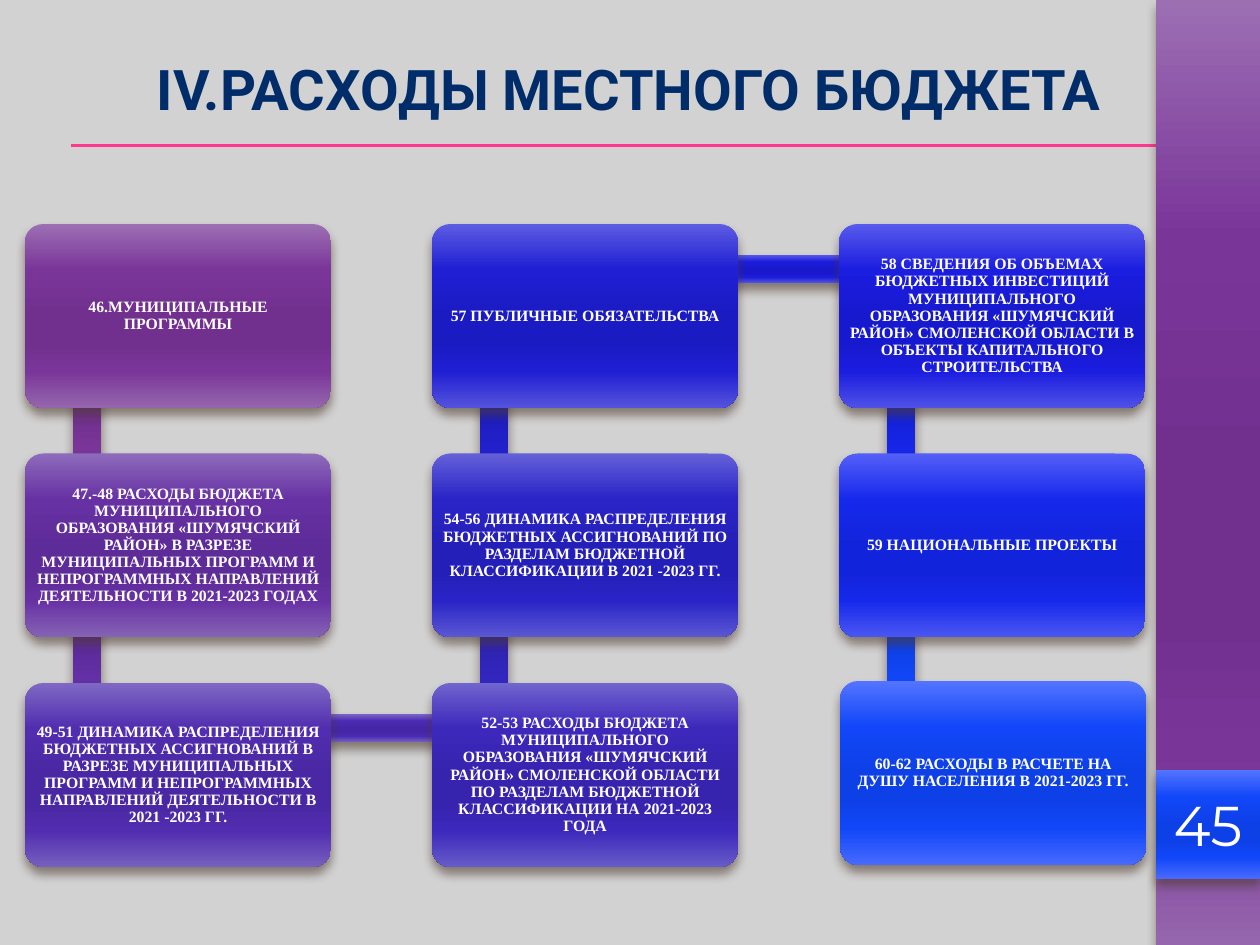
from dataclasses import dataclass

from lxml.etree import SubElement
from pptx import Presentation
from pptx.dml.color import RGBColor
from pptx.enum.shapes import MSO_CONNECTOR, MSO_SHAPE
from pptx.enum.text import MSO_ANCHOR, PP_ALIGN
from pptx.oxml.ns import qn
from pptx.util import Pt

EMU_PER_PX = 914400 / 126


@dataclass(frozen=True)
class Theme:
    background: str = "D2D2D2"
    title: str = "002D6A"
    rule: str = "FF388C"
    text: str = "FFFFFF"
    shadow: str = "4E3B30"
    # Gradients run from the top edge through light and dark to the bottom edge
    purple: tuple = ("9C6FB3", "7A3599", "71308E", "9566AD")
    blue: tuple = ("5374FF", "1147F8", "0E40E7", "476AFD")
    title_font: str = "Roboto"
    number_font: str = "Montserrat"
    card_font: str = "Times New Roman"
    title_size: int = 32
    number_size: int = 32
    card_size: int = 9


THEME = Theme()

# Each step: card text, card gradient, gradient of the bar to the next card
STEPS = [
    ("46.МУНИЦИПАЛЬНЫЕ ПРОГРАММЫ", THEME.purple, THEME.purple),
    ("47.-48 РАСХОДЫ БЮДЖЕТА МУНИЦИПАЛЬНОГО ОБРАЗОВАНИЯ «ШУМЯЧСКИЙ РАЙОН» В РАЗРЕЗЕ "
     "МУНИЦИПАЛЬНЫХ ПРОГРАММ И НЕПРОГРАММНЫХ НАПРАВЛЕНИЙ ДЕЯТЕЛЬНОСТИ В 2021-2023 ГОДАХ",
     ("8D6BBB", "6731A4", "5E2C98", "8663B5"), ("8B6BBD", "6430A6", "5C2B9A", "8462B7")),
    ("49-51 ДИНАМИКА РАСПРЕДЕЛЕНИЯ БЮДЖЕТНЫХ АССИГНОВАНИЙ В РАЗРЕЗЕ МУНИЦИПАЛЬНЫХ "
     "ПРОГРАММ И НЕПРОГРАММНЫХ НАПРАВЛЕНИЙ ДЕЯТЕЛЬНОСТИ В 2021 -2023 ГГ.",
     ("7E68C4", "512DAF", "4A28A3", "765FBF"), ("7A67C7", "4B2BB3", "4427A6", "725EC1")),
    ("52-53 РАСХОДЫ БЮДЖЕТА МУНИЦИПАЛЬНОГО ОБРАЗОВАНИЯ «ШУМЯЧСКИЙ РАЙОН» СМОЛЕНСКОЙ "
     "ОБЛАСТИ ПО РАЗДЕЛАМ БЮДЖЕТНОЙ КЛАССИФИКАЦИИ НА 2021-2023 ГОДА",
     ("7064CE", "3C28BB", "3624AE", "675BC8"), ("6A63D2", "3326C0", "2E22B2", "625ACC")),
    ("54-56 ДИНАМИКА РАСПРЕДЕЛЕНИЯ БЮДЖЕТНЫХ АССИГНОВАНИЙ ПО РАЗДЕЛАМ БЮДЖЕТНОЙ "
     "КЛАССИФИКАЦИИ В 2021 -2023 ГГ.",
     ("6460D8", "2A24C7", "251FB9", "5B58D2"), ("5F5EDD", "2321CD", "1E1DBF", "5655D8")),
    ("57 ПУБЛИЧНЫЕ ОБЯЗАТЕЛЬСТВА",
     ("5C5CE2", "201FD3", "1B1BC4", "5453DC"), ("595AE9", "1C1DDB", "1819CC", "5051E4")),
    ("58 СВЕДЕНИЯ ОБ ОБЪЕМАХ БЮДЖЕТНЫХ ИНВЕСТИЦИЙ МУНИЦИПАЛЬНОГО ОБРАЗОВАНИЯ «ШУМЯЧСКИЙ "
     "РАЙОН» СМОЛЕНСКОЙ ОБЛАСТИ В ОБЪЕКТЫ КАПИТАЛЬНОГО СТРОИТЕЛЬСТВА",
     ("585AEC", "1B1DDF", "1719CF", "4F51E7"), ("545EF6", "1726E9", "1322D9", "4C55F0")),
    ("59 НАЦИОНАЛЬНЫЕ ПРОЕКТЫ",
     ("545FF7", "1629EB", "1224DB", "4B57F2"), THEME.blue),
    ("60-62 РАСХОДЫ В РАСЧЕТЕ НА ДУШУ НАСЕЛЕНИЯ В 2021-2023 ГГ.", THEME.blue, None),
]


def px(length):
    return round(length * EMU_PER_PX)


def set_gradient(shape, colors):
    """Fill from top to bottom with a dark band in the middle."""
    top, light, dark, bottom = colors
    shape.fill.gradient()
    shape.fill.gradient_angle = 270
    stops = shape._element.spPr.find(qn("a:gradFill")).find(qn("a:gsLst"))
    for stop in list(stops):
        stops.remove(stop)
    positions = (0, 25, 50, 65, 80, 100)
    for position, color in zip(positions, (top, light, dark, dark, light, bottom)):
        stop = SubElement(stops, qn("a:gs"), pos=str(position * 1000))
        SubElement(stop, qn("a:srgbClr"), val=color)


def set_shadow(shape):
    shape.shadow.inherit = False
    effects = shape._element.spPr.find(qn("a:effectLst"))
    shadow = SubElement(effects, qn("a:outerShdw"), blurRad=str(Pt(6)), dist=str(Pt(4)),
                        dir="5400000", algn="ctr", rotWithShape="0")
    color = SubElement(shadow, qn("a:srgbClr"), val=THEME.shadow)
    SubElement(color, qn("a:alpha"), val="60000")


def add_block(slide, kind, box, colors):
    block = slide.shapes.add_shape(kind, *map(px, box))
    set_gradient(block, colors)
    block.line.fill.background()
    set_shadow(block)
    return block


def write_centered(shape, text, font_name, size, color, bold=False):
    frame = shape.text_frame
    frame.text = text
    frame.word_wrap = True
    frame.vertical_anchor = MSO_ANCHOR.MIDDLE
    paragraph = frame.paragraphs[0]
    paragraph.alignment = PP_ALIGN.CENTER
    font = paragraph.font
    font.name, font.size, font.bold = font_name, Pt(size), bold
    font.color.rgb = RGBColor.from_string(color)
    return paragraph


def add_header(slide, box):
    left, top, width, height = box
    title = slide.shapes.title
    title.left, title.top, title.width, title.height = map(px, box)
    write_centered(title, "IV.РАСХОДЫ МЕСТНОГО БЮДЖЕТА", THEME.title_font,
                   THEME.title_size, THEME.title, bold=True)
    for rule_y in (top + 119, top + 120):
        rule = slide.shapes.add_connector(MSO_CONNECTOR.STRAIGHT, px(left - 10), px(rule_y),
                                          px(left + width + 83), px(rule_y))
        rule.line.color.rgb = RGBColor.from_string(THEME.rule)
        rule.line.width = Pt(0.75)
        SubElement(rule._element.spPr, qn("a:effectLst"))


def add_sidebar(slide, box):
    left, top, width, _ = box
    add_block(slide, MSO_SHAPE.RECTANGLE, box, THEME.purple)
    badge = add_block(slide, MSO_SHAPE.RECTANGLE, (left, top + 770, width, 109), THEME.blue)
    write_centered(badge, "45", THEME.number_font, THEME.number_size, THEME.text)


def add_bar(slide, start, end, colors):
    """Join two card corners, each given as (left, top), by a thick straight bar."""
    inset_x, inset_y, thickness = 62, 45, 28
    left, top = min(start[0], end[0]) + inset_x, min(start[1], end[1]) + inset_y
    length_x, length_y = abs(end[0] - start[0]), abs(end[1] - start[1])
    if length_x > length_y:
        box = (left, top - thickness / 2, length_x, thickness)
    else:
        box = (left - thickness / 2, top, thickness, length_y)
    add_block(slide, MSO_SHAPE.RECTANGLE, box, colors)


def add_card(slide, box, text, colors):
    card = add_block(slide, MSO_SHAPE.ROUNDED_RECTANGLE, box, colors)
    card.adjustments[0] = 0.1
    frame = card.text_frame
    frame.margin_left = frame.margin_right = frame.margin_top = frame.margin_bottom = px(5)
    paragraph = write_centered(card, text, THEME.card_font, THEME.card_size,
                               THEME.text, bold=True)
    paragraph.line_spacing = 0.9


def add_snake(slide, box):
    """Lay the steps down, up and down again through three columns."""
    left, top, width, height = box
    rows, card_width, card_height = 3, 306, 184
    step_x, step_y = (width - card_width) / 2, (height - card_height) / 2
    corners = []
    for index in range(len(STEPS)):
        column, row = divmod(index, rows)
        if column % 2:
            row = rows - 1 - row
        corners.append((left + column * step_x, top + row * step_y))
    corners[-1] = (corners[-1][0] + 1, corners[-1][1] - 2)  # last card sits slightly off grid

    for index, (text, card_colors, bar_colors) in enumerate(STEPS):
        if bar_colors:
            add_bar(slide, corners[index], corners[index + 1], bar_colors)
        add_card(slide, (*corners[index], card_width, card_height), text, card_colors)


def main():
    presentation = Presentation()
    presentation.slide_width, presentation.slide_height = px(1260), px(945)
    slide = presentation.slides.add_slide(presentation.slide_layouts[5])
    slide.background.fill.solid()
    slide.background.fill.fore_color.rgb = RGBColor.from_string(THEME.background)
    add_header(slide, (81, 26, 1096, 124))
    add_sidebar(slide, (1156, 0, 104, 945))
    add_snake(slide, (25, 224, 1120, 643))
    presentation.save("out.pptx")


if __name__ == "__main__":
    main()
